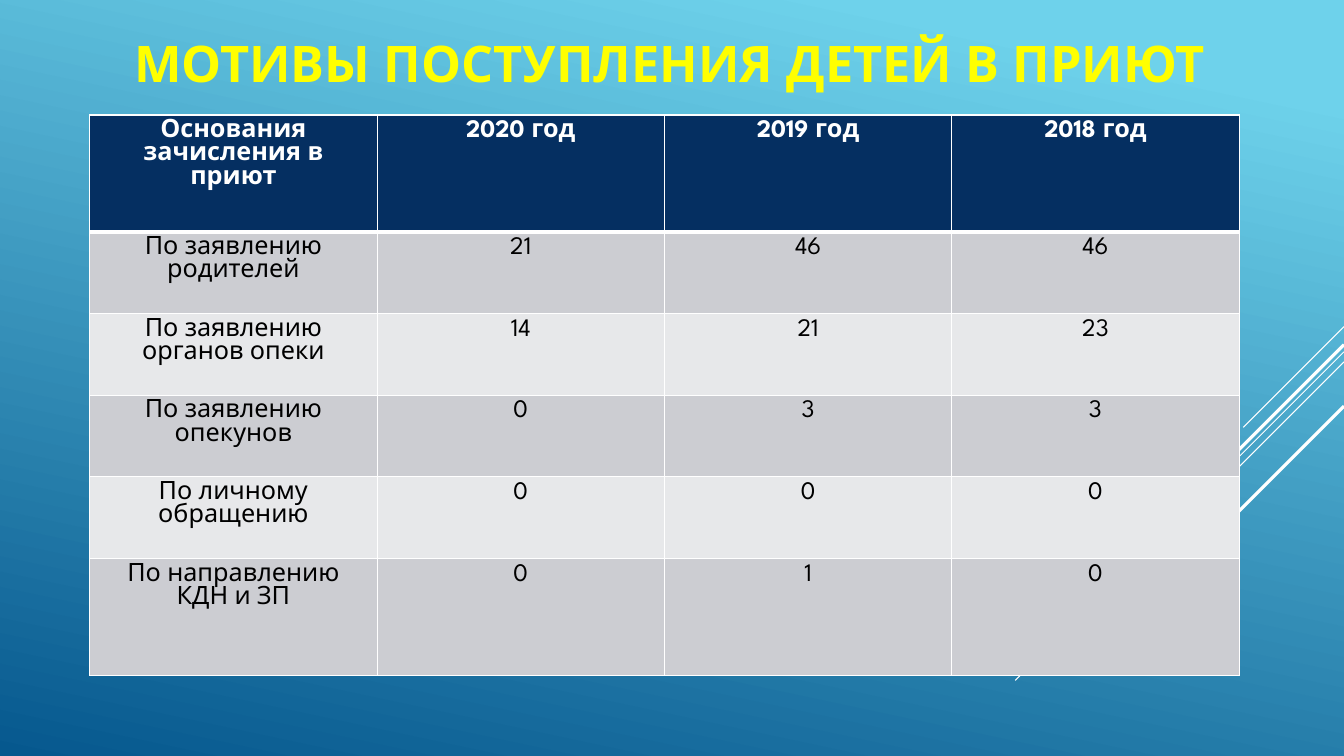
"""Build a slide with a table of the reasons children enter a shelter."""
import pptx
import pptx.dml.color
import pptx.enum.shapes
import pptx.enum.text
import pptx.oxml
import pptx.oxml.ns
import pptx.util
from dataclasses import dataclass

TITLE = "МОТИВЫ ПОСТУПЛЕНИЯ ДЕТЕЙ В ПРИЮТ"
ROWS = [
    ("Основания зачисления в приют", "2020 год", "2019 год", "2018 год"),
    ("По заявлению родителей", "21", "46", "46"),
    ("По заявлению органов опеки", "14", "21", "23"),
    ("По заявлению опекунов", "0", "3", "3"),
    ("По личному обращению", "0", "0", "0"),
    ("По направлению КДН и ЗП", "0", "1", "0"),
]
WIDTH, HEIGHT = 13.33, 7.5
TITLE_BOX = (0.33, 0.1, 12.63, 1.03)
TABLE_LEFT, TABLE_TOP, COLUMN_WIDTH = 0.89, 1.14, 2.85
TALL_ROW, ROW = 1.16, 0.81
# (start height at the right edge, run of the 45-degree line, weight)
RAYS = [(3.24, 1, 0.75), (3.49, 3.26, 0.75), (3.59, 2.07, 0.75),
        (3.42, 1.91, 2.25), (4.03, 1.39, 2.25)]


@dataclass(frozen=True)
class Theme:
    font: str = "League Spartan"
    title_size: int = 36
    table_size: int = 18
    title: str = "FFFF00"
    light: str = "FFFFFF"
    dark: str = "000000"
    header: str = "052F61"
    bands: tuple = ("E7E8EA", "CCCDD2")
    sky: tuple = ((0.1, "6ED2EB"), (1, "06588E"))
    sky_angle: int = 102
    border: int = 1
    header_border: int = 3


THEME = Theme()
inches = pptx.util.Inches
rgb = pptx.dml.color.RGBColor.from_string


def write(frame, text, *, size, color, bold=False):
    para = frame.paragraphs[0]
    para.alignment = pptx.enum.text.PP_ALIGN.CENTER
    span = para.add_run()
    span.text = text
    span.font.name = THEME.font
    span.font.size = pptx.util.Pt(size)
    span.font.bold = bold
    span.font.color.rgb = rgb(color)


def paint_background(page):
    fill = page.background.fill
    fill.gradient()
    fill.gradient_angle = 360 - THEME.sky_angle
    for stop, (position, color) in zip(fill.gradient_stops, THEME.sky):
        stop.position = position
        stop.color.rgb = rgb(color)


def draw_ray(page, top, run, weight):
    ray = page.shapes.add_connector(
        pptx.enum.shapes.MSO_CONNECTOR.STRAIGHT,
        inches(WIDTH), inches(top), inches(WIDTH - run), inches(top + run))
    ray.line.color.rgb = rgb(THEME.light)
    ray.line.width = pptx.util.Pt(weight)
    properties = ray._element.spPr
    properties.append(properties.makeelement(pptx.oxml.ns.qn("a:effectLst"), {}))


def set_borders(cell, weights):
    properties = cell._tc.get_or_add_tcPr()
    for index, (side, weight) in enumerate(weights.items()):
        properties.insert(index, pptx.oxml.parse_xml(
            f'<a:ln{side} {pptx.oxml.ns.nsdecls("a")} w="{pptx.util.Pt(weight)}">'
            f'<a:solidFill><a:srgbClr val="{THEME.light}"/></a:solidFill></a:ln{side}>'))


def add_reasons_table(page):
    heights = [TALL_ROW, *[ROW] * (len(ROWS) - 2), TALL_ROW]
    columns = len(ROWS[0])
    table = page.shapes.add_table(
        len(ROWS), columns, inches(TABLE_LEFT), inches(TABLE_TOP),
        inches(COLUMN_WIDTH * columns), inches(sum(heights))).table
    for column in table.columns:
        column.width = inches(COLUMN_WIDTH)
    for number, (values, height) in enumerate(zip(ROWS, heights)):
        table.rows[number].height = inches(height)
        is_header = number == 0
        for index, value in enumerate(values):
            cell = table.cell(number, index)
            cell.fill.solid()
            cell.fill.fore_color.rgb = rgb(
                THEME.header if is_header else THEME.bands[number % 2])
            set_borders(cell, {
                "L": THEME.border, "R": THEME.border,
                "T": THEME.header_border if number == 1 else THEME.border,
                "B": THEME.header_border if is_header else THEME.border})
            write(cell.text_frame, value, size=THEME.table_size, bold=is_header,
                  color=THEME.light if is_header else THEME.dark)


def main():
    deck = pptx.Presentation()
    deck.slide_width, deck.slide_height = inches(WIDTH), inches(HEIGHT)
    page = deck.slides.add_slide(deck.slide_layouts.get_by_name("Title Only"))
    paint_background(page)
    for ray in RAYS:
        draw_ray(page, *ray)
    title = page.shapes.title
    title.left, title.top, title.width, title.height = map(inches, TITLE_BOX)
    title.text_frame.vertical_anchor = pptx.enum.text.MSO_ANCHOR.MIDDLE
    write(title.text_frame, TITLE, size=THEME.title_size, color=THEME.title, bold=True)
    add_reasons_table(page)
    deck.save("out.pptx")


if __name__ == "__main__":
    main()
